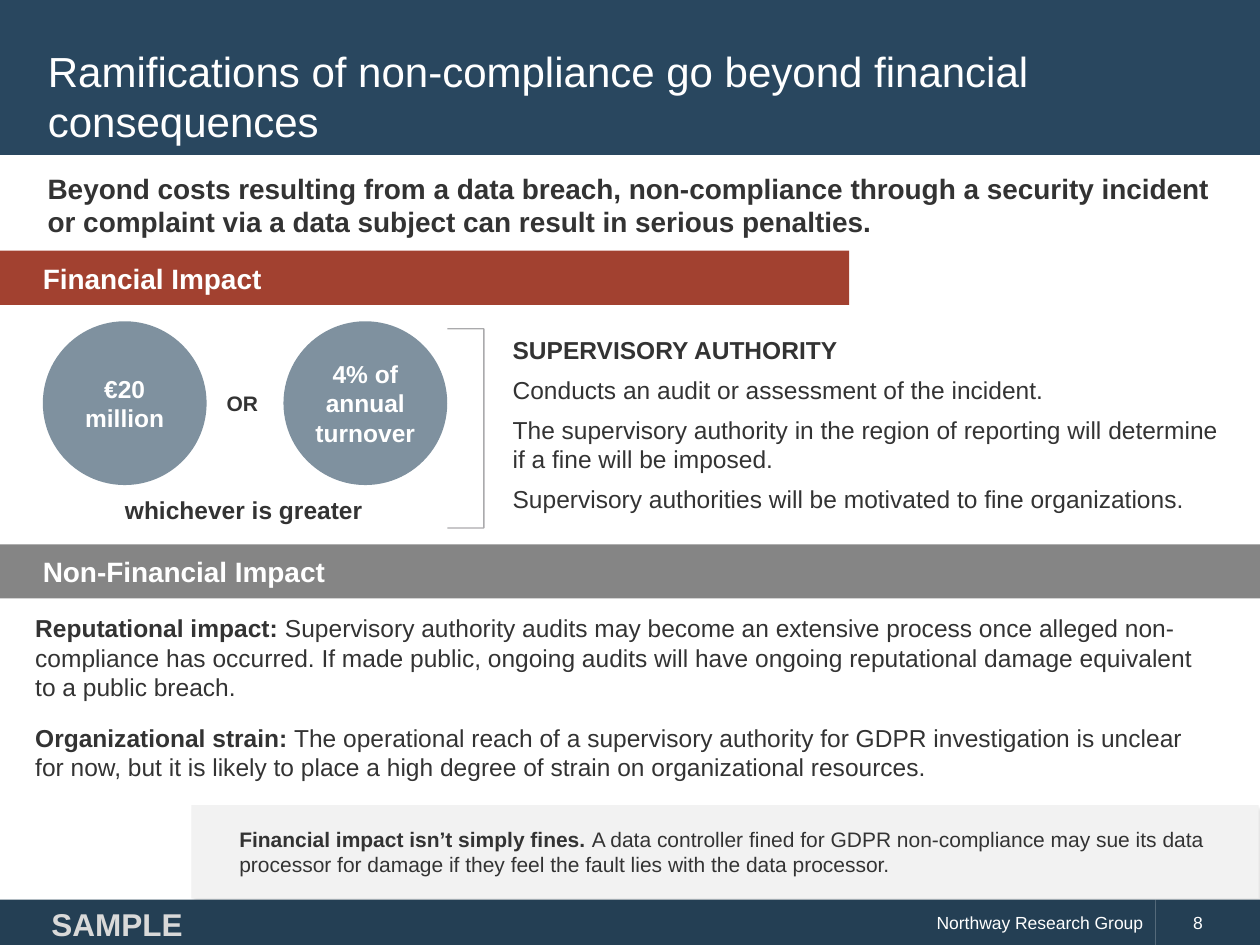
from lxml.etree import SubElement
from pptx import Presentation
from pptx.dml.color import RGBColor
from pptx.enum.shapes import MSO_SHAPE
from pptx.enum.text import MSO_ANCHOR, PP_ALIGN
from pptx.oxml.ns import qn
from pptx.util import Inches, Pt

COLORS = {
    "navy": "29475F",
    "footer": "243F54",
    "red": "A24130",
    "gray": "858585",
    "slate": "7F919F",
    "callout": "F2F2F2",
    "bracket": "57565A",
    "shadow": "000000",
    "text": "333333",
    "label": "D9D9D9",
    "white": "FFFFFF",
}


def rgb(name):
    return RGBColor.from_string(COLORS[name])


def write_text(sp, paragraphs, size=14, color="text", align=PP_ALIGN.LEFT,
               anchor=MSO_ANCHOR.TOP, left=0.1, right=0.1, before=0, after=0):
    tf = sp.text_frame
    tf.word_wrap = True
    tf.vertical_anchor = anchor
    tf.margin_left, tf.margin_right = Inches(left), Inches(right)
    tf.margin_top = tf.margin_bottom = Inches(0.05)
    for i, runs in enumerate(paragraphs):
        p = tf.add_paragraph() if i else tf.paragraphs[0]
        p.alignment = align
        p.space_before, p.space_after = Pt(before), Pt(after)
        for text, bold in runs:
            r = p.add_run()
            r.text = text
            r.font.name = "Arial"
            r.font.size = Pt(size)
            r.font.bold = bold
            r.font.color.rgb = rgb(color)


def add_text(s, box, paragraphs, **fmt):
    sp = s.shapes.add_textbox(*map(Inches, box))
    write_text(sp, paragraphs, **fmt)
    return sp


def add_block(s, box, fill, paragraphs=(), kind=MSO_SHAPE.RECTANGLE, **fmt):
    sp = s.shapes.add_shape(kind, *map(Inches, box))
    sp.shadow.inherit = False
    sp.fill.solid()
    sp.fill.fore_color.rgb = rgb(fill)
    sp.line.fill.background()
    write_text(sp, paragraphs, **{"anchor": MSO_ANCHOR.MIDDLE, **fmt})
    return sp


def add_alpha(color_el, percent):
    SubElement(color_el, qn("a:alpha"), val=str(percent * 1000))


def add_soft_shadow(sp):
    effects = sp.element.spPr.find(qn("a:effectLst"))
    shadow = SubElement(effects, qn("a:outerShdw"), blurRad=str(Pt(2)),
                        dist=str(Pt(2)), dir=str(45 * 60000))
    add_alpha(SubElement(shadow, qn("a:srgbClr"), val=COLORS["shadow"]), 10)


def add_bracket(s, left, top, right, bottom):
    points = [(left, bottom), (right, bottom), (right, top), (left, top)]
    start, *rest = [(Inches(x), Inches(y)) for x, y in points]
    builder = s.shapes.build_freeform(*start)
    builder.add_line_segments(rest, close=False)
    sp = builder.convert_to_shape()
    sp.shadow.inherit = False
    sp.fill.background()
    sp.line.width = Pt(0.75)
    sp.line.color.rgb = rgb("bracket")
    add_alpha(sp.element.spPr.find(".//" + qn("a:srgbClr")), 50)


def add_title(s, text):
    title = s.shapes.title
    title.left, title.top, title.width, title.height = map(
        Inches, (0.28, 0.28, 9.43, 0.96))
    write_text(title, [[(text, False)]], size=24, color="white",
               anchor=MSO_ANCHOR.MIDDLE)
    header = add_block(s, (0, 0, 10, 1.23), "navy")
    title.element.addprevious(header.element)


def add_financial_impact(s):
    add_block(s, (0, 1.99, 6.74, 0.43), "red", [[("Financial Impact", True)]],
              size=16, color="white", left=0.34)
    for x, text in ((0.34, "€20 million"), (2.25, "4% of annual turnover")):
        add_block(s, (x, 2.55, 1.3, 1.3), "slate", [[(text, True)]],
                  kind=MSO_SHAPE.OVAL, color="white", align=PP_ALIGN.CENTER,
                  left=0.04, right=0.04)
    add_text(s, (1.7, 3.05, 0.5, 0.3), [[("OR", True)]], size=12)
    add_text(s, (0.7, 3.88, 2.47, 0.34), [[("whichever is greater", True)]],
             align=PP_ALIGN.CENTER)
    add_bracket(s, 3.55, 2.61, 3.84, 4.19)
    add_text(s, (3.97, 2.61, 5.85, 1.53), [
        [("SUPERVISORY AUTHORITY", True)],
        [("Conducts an audit or assessment of the incident.", False)],
        [("The supervisory authority in the region of reporting will "
          "determine if a fine will be imposed.", False)],
        [("Supervisory authorities will be motivated to fine organizations.",
          False)],
    ], after=6)


def add_non_financial_impact(s):
    add_block(s, (0, 4.32, 10, 0.43), "gray", [[("Non-Financial Impact", True)]],
              size=16, color="white", left=0.34)
    add_block(s, (0, 4.82, 10, 1.46), "white", [
        [("Reputational impact:", True),
         (" Supervisory authority audits may become an extensive process once "
          "alleged non-compliance has occurred. If made public, ongoing audits "
          "will have ongoing reputational damage equivalent to a public breach.",
          False)],
        [("Organizational strain:", True),
         (" The operational reach of a supervisory authority for GDPR "
          "investigation is unclear for now, but it is likely to place a high "
          "degree of strain on organizational resources.", False)],
    ], anchor=MSO_ANCHOR.TOP, left=0.28, right=0.47, before=6, after=6)
    callout = add_block(s, (1.52, 6.39, 8.47, 0.74), "callout", [
        [("Financial impact isn’t simply fines. ", True),
         ("A data controller fined for GDPR non-compliance may sue its data "
          "processor for damage if they feel the fault lies with the data "
          "processor.", False)],
    ], size=12, left=0.38)
    add_soft_shadow(callout)


def add_footer(s):
    add_block(s, (0, 7.14, 9.17, 0.37), "footer",
              [[("Northway Research Group", False)]], size=10, color="white",
              align=PP_ALIGN.RIGHT)
    add_block(s, (9.17, 7.14, 0.83, 0.37), "footer", [[("8", False)]],
              size=10, color="white", left=0.3)
    add_text(s, (0.26, 7.21, 1.34, 0.24), [[("SAMPLE", True)]], size=18,
             color="label", align=PP_ALIGN.CENTER, anchor=MSO_ANCHOR.MIDDLE)


def main():
    prs = Presentation()
    prs.slide_width, prs.slide_height = Inches(10), Inches(7.5)
    s = prs.slides.add_slide(prs.slide_layouts[5])
    add_title(s, "Ramifications of non-compliance go beyond financial consequences")
    add_text(s, (0.28, 1.31, 9.43, 0.64), [
        [("Beyond costs resulting from a data breach, non-compliance through a "
          "security incident or complaint via a data subject can result in "
          "serious penalties.", True)],
    ], size=16)
    add_financial_impact(s)
    add_non_financial_impact(s)
    add_footer(s)
    prs.save("out.pptx")


if __name__ == "__main__":
    main()
